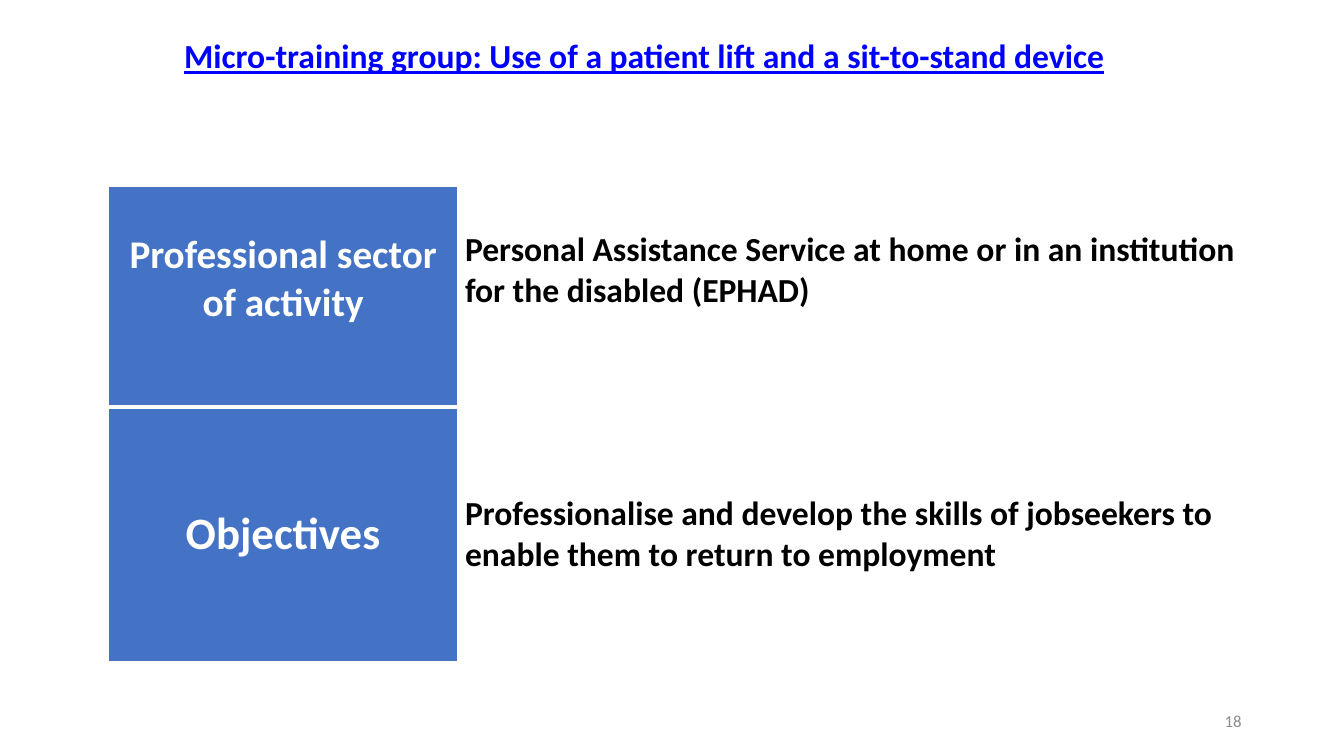
import pptx
import pptx.dml.color
import pptx.enum.text
import pptx.oxml.ns
import pptx.util
from lxml import etree

Cm = pptx.util.Cm
Pt = pptx.util.Pt
ALIGN = pptx.enum.text.PP_ALIGN
MIDDLE = pptx.enum.text.MSO_ANCHOR.MIDDLE

COLOURS = {
    "title": "0000FF",
    "number": "8C8C8C",
    "label": "4472C4",
    "paper": "FFFFFF",
    "ink": "000000",
}
TITLE = "Micro-training group: Use of a patient lift and a sit-to-stand device"
COLUMNS = (8.79, 20.02)
# height, label, label size, detail, extra space under label and detail, lower border
ROWS = [
    (5.56, "Professional sector of activity", 28,
     "Personal Assistance Service at home or in an institution for the disabled (EPHAD)",
     0.88, 1.31, 3),
    (6.4, "Objectives", 32,
     "Professionalise and develop the skills of jobseekers to enable them to return to employment",
     0, 0, 1),
]


def colour(name):
    return pptx.dml.color.RGBColor.from_string(COLOURS[name])


def write(frame, text, ink, font, layout):
    """Put one formatted paragraph into a text frame."""
    para = frame.paragraphs[0]
    for name, value in layout.items():
        setattr(para, name, value)
    span = para.add_run()
    span.text = text
    for name, value in {"name": "Calibri", **font}.items():
        setattr(span.font, name, value)
    span.font.color.rgb = colour(ink)


def add_text(page, box, text, ink, font, layout):
    frame = page.shapes.add_textbox(*map(Cm, box)).text_frame
    frame.word_wrap = True
    frame.vertical_anchor = MIDDLE
    write(frame, text, ink, font, layout)


def add_borders(cell, lower):
    """Draw white borders, with the lower one in its own width."""
    properties = cell._tc.get_or_add_tcPr()
    for side, width in {"L": 1, "R": 1, "T": 1, "B": lower}.items():
        line = etree.SubElement(properties, pptx.oxml.ns.qn(f"a:ln{side}"), w=str(Pt(width)))
        fill = etree.SubElement(line, pptx.oxml.ns.qn("a:solidFill"))
        etree.SubElement(fill, pptx.oxml.ns.qn("a:srgbClr"), val=COLOURS["paper"])


def fill_cell(cell, text, size, fill, ink, align, space_below, lower):
    add_borders(cell, lower)
    cell.fill.solid()
    cell.fill.fore_color.rgb = colour(fill)
    layout = {
        "margin_left": Cm(0.19),
        "margin_right": Cm(0.19),
        "margin_top": 0,
        "margin_bottom": Cm(space_below),
        "vertical_anchor": MIDDLE,
    }
    for name, value in layout.items():
        setattr(cell, name, value)
    write(cell.text_frame, text, ink, {"size": Pt(size), "bold": True},
          {"alignment": align, "space_before": Pt(8)})


def add_training_table(page, left, top):
    height = sum(row[0] for row in ROWS)
    table = page.shapes.add_table(
        len(ROWS), len(COLUMNS), Cm(left), Cm(top), Cm(sum(COLUMNS)), Cm(height)).table
    for column, width in zip(table.columns, COLUMNS):
        column.width = Cm(width)
    for index, (height, label, size, detail, label_gap, detail_gap, lower) in enumerate(ROWS):
        table.rows[index].height = Cm(height)
        fill_cell(table.cell(index, 0), label, size, "label", "paper",
                  ALIGN.CENTER, label_gap, lower)
        fill_cell(table.cell(index, 1), detail, 24, "paper", "ink",
                  ALIGN.LEFT, detail_gap, lower)


def main():
    deck = pptx.Presentation()
    deck.slide_width, deck.slide_height = Cm(33.87), Cm(19.05)
    page = deck.slides.add_slide(deck.slide_layouts[6])
    add_text(page, (4.39, 0.56, 29.21, 1.8), TITLE, "title",
             {"size": Pt(24), "bold": True, "underline": True}, {"line_spacing": 0.9})
    add_text(page, (23.92, 17.66, 7.62, 1.01), "18", "number",
             {"size": Pt(12)}, {"alignment": ALIGN.RIGHT})
    add_training_table(page, 2.74, 4.7)
    deck.save("out.pptx")


if __name__ == "__main__":
    main()
